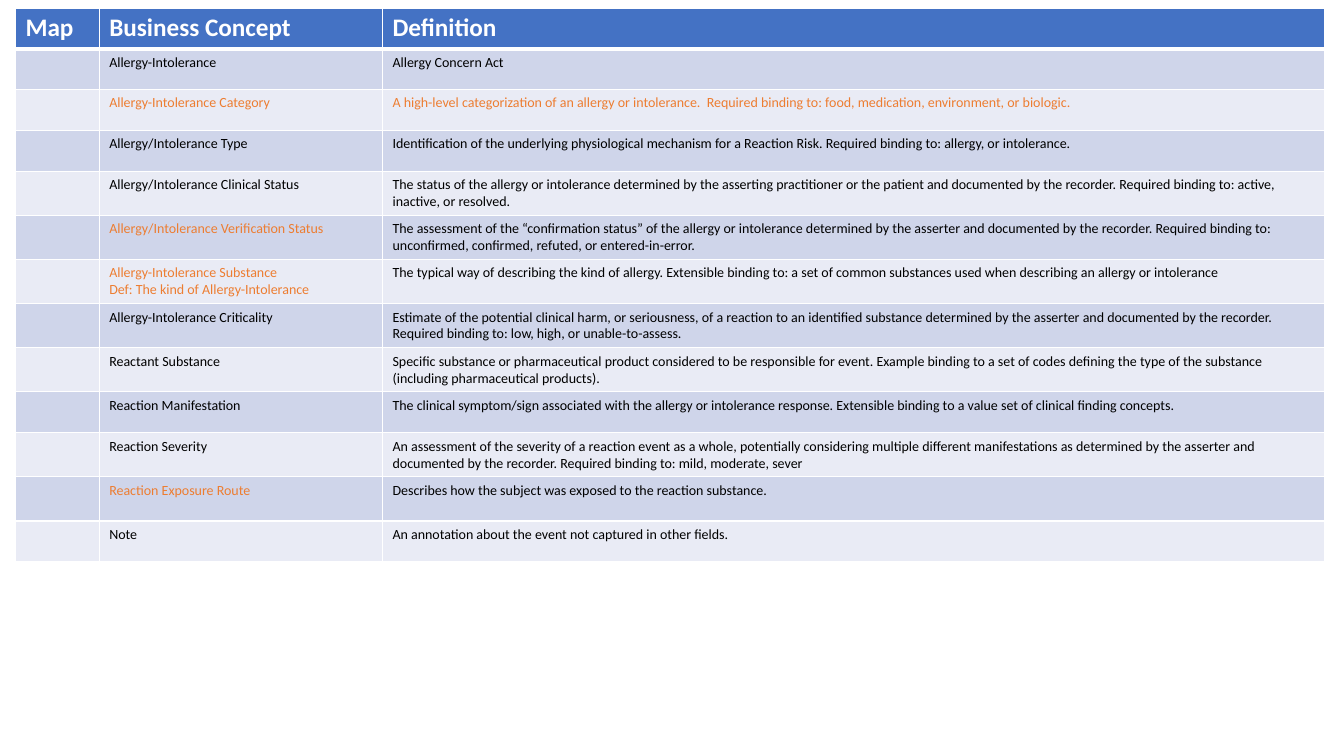
from dataclasses import dataclass

from lxml.etree import SubElement
from pptx import Presentation
from pptx.dml.color import RGBColor
from pptx.oxml.ns import qn
from pptx.util import Cm, Pt


@dataclass(frozen=True)
class Theme:
    font: str = "Calibri"
    header_size: int = 18
    body_size: int = 10
    header_fill: str = "4472C4"
    odd_fill: str = "CFD5EA"
    even_fill: str = "E9EBF5"
    white: str = "FFFFFF"
    ink: str = "000000"
    accent: str = "ED7D31"
    thin_rule: int = 1
    header_rule: int = 3


THEME = Theme()
INK, ACCENT = THEME.ink, THEME.accent

COLUMN_WIDTHS = (2.11, 7.14, 23.75)
ROW_HEIGHT = 1.03
TALL_ROW_HEIGHT = 1.11
TALL_CONCEPT = "Reaction Exposure Route"

HEADINGS = ("Map", "Business Concept", "Definition")
# Concept, its colour, definition, its colour
CONCEPTS = (
    ("Allergy-Intolerance", INK, "Allergy Concern Act", INK),
    ("Allergy-Intolerance Category", ACCENT,
     "A high-level categorization of an allergy or intolerance.  Required binding to: "
     "food, medication, environment, or biologic.", ACCENT),
    ("Allergy/Intolerance Type", INK,
     "Identification of the underlying physiological mechanism for a Reaction Risk. "
     "Required binding to: allergy, or intolerance.", INK),
    ("Allergy/Intolerance Clinical Status", INK,
     "The status of the allergy or intolerance determined by the asserting practitioner "
     "or the patient and documented by the recorder. Required binding to: active, "
     "inactive, or resolved.", INK),
    ("Allergy/Intolerance Verification Status", ACCENT,
     "The assessment of the “confirmation status” of the allergy or intolerance "
     "determined by the asserter and documented by the recorder. Required binding to: "
     "unconfirmed, confirmed, refuted, or entered-in-error.", INK),
    ("Allergy-Intolerance Substance\nDef: The kind of Allergy-Intolerance", ACCENT,
     "The typical way of describing the kind of allergy. Extensible binding to: a set of "
     "common substances used when describing an allergy or intolerance", INK),
    ("Allergy-Intolerance Criticality", INK,
     "Estimate of the potential clinical harm, or seriousness, of a reaction to an "
     "identified substance determined by the asserter and documented by the recorder. "
     "Required binding to: low, high, or unable-to-assess.", INK),
    ("Reactant Substance", INK,
     "Specific substance or pharmaceutical product considered to be responsible for "
     "event. Example binding to a set of codes defining the type of the substance "
     "(including pharmaceutical products).", INK),
    ("Reaction Manifestation", INK,
     "The clinical symptom/sign associated with the allergy or intolerance response. "
     "Extensible binding to a value set of clinical finding concepts.", INK),
    ("Reaction Severity", INK,
     "An assessment of the severity of a reaction event as a whole, potentially "
     "considering multiple different manifestations as determined by the asserter and "
     "documented by the recorder. Required binding to: mild, moderate, sever", INK),
    ("Reaction Exposure Route", ACCENT,
     "Describes how the subject was exposed to the reaction substance.", INK),
    ("Note", INK, "An annotation about the event not captured in other fields.", INK),
)


def write_text(cell, text, *, size=THEME.body_size, color=INK, bold=False):
    cell.text = text
    for para in cell.text_frame.paragraphs:
        for span in para.runs:
            span.font.name = THEME.font
            span.font.size = Pt(size)
            span.font.bold = bold
            span.font.color.rgb = RGBColor.from_string(color)


def style_cell(cell, fill, *, top=THEME.thin_rule, bottom=THEME.thin_rule):
    """Draw white rules round the cell, then fill it."""
    properties = cell._tc.get_or_add_tcPr()
    sides = {"L": THEME.thin_rule, "R": THEME.thin_rule, "T": top, "B": bottom}
    for side, width in sides.items():
        line = SubElement(properties, qn(f"a:ln{side}"), w=str(Pt(width)))
        solid = SubElement(line, qn("a:solidFill"))
        SubElement(solid, qn("a:srgbClr"), val=THEME.white)
    cell.fill.solid()
    cell.fill.fore_color.rgb = RGBColor.from_string(fill)


def add_grid(page, row_count):
    frame = page.shapes.add_table(
        row_count, len(COLUMN_WIDTHS), Cm(0.39), Cm(0.2),
        Cm(sum(COLUMN_WIDTHS)), Cm(ROW_HEIGHT * row_count))
    table = frame.table
    for column, width in zip(table.columns, COLUMN_WIDTHS):
        column.width = Cm(width)
    for row in table.rows:
        row.height = Cm(ROW_HEIGHT)
    return table


def fill_header(row):
    for cell, heading in zip(row.cells, HEADINGS):
        style_cell(cell, THEME.header_fill, bottom=THEME.header_rule)
        write_text(cell, heading, size=THEME.header_size, color=THEME.white, bold=True)


def fill_concept(row, number, entry):
    concept, concept_color, definition, definition_color = entry
    fill = THEME.odd_fill if number % 2 else THEME.even_fill
    top = THEME.header_rule if number == 1 else THEME.thin_rule
    for cell in row.cells:
        style_cell(cell, fill, top=top)
    write_text(row.cells[1], concept, color=concept_color)
    write_text(row.cells[2], definition, color=definition_color)
    if concept == TALL_CONCEPT:
        row.height = Cm(TALL_ROW_HEIGHT)


def main():
    deck = Presentation()
    deck.slide_width, deck.slide_height = Cm(33.87), Cm(19.05)
    page = deck.slides.add_slide(deck.slide_layouts[6])
    table = add_grid(page, len(CONCEPTS) + 1)
    fill_header(table.rows[0])
    for number, entry in enumerate(CONCEPTS, start=1):
        fill_concept(table.rows[number], number, entry)
    deck.save("out.pptx")


if __name__ == "__main__":
    main()
